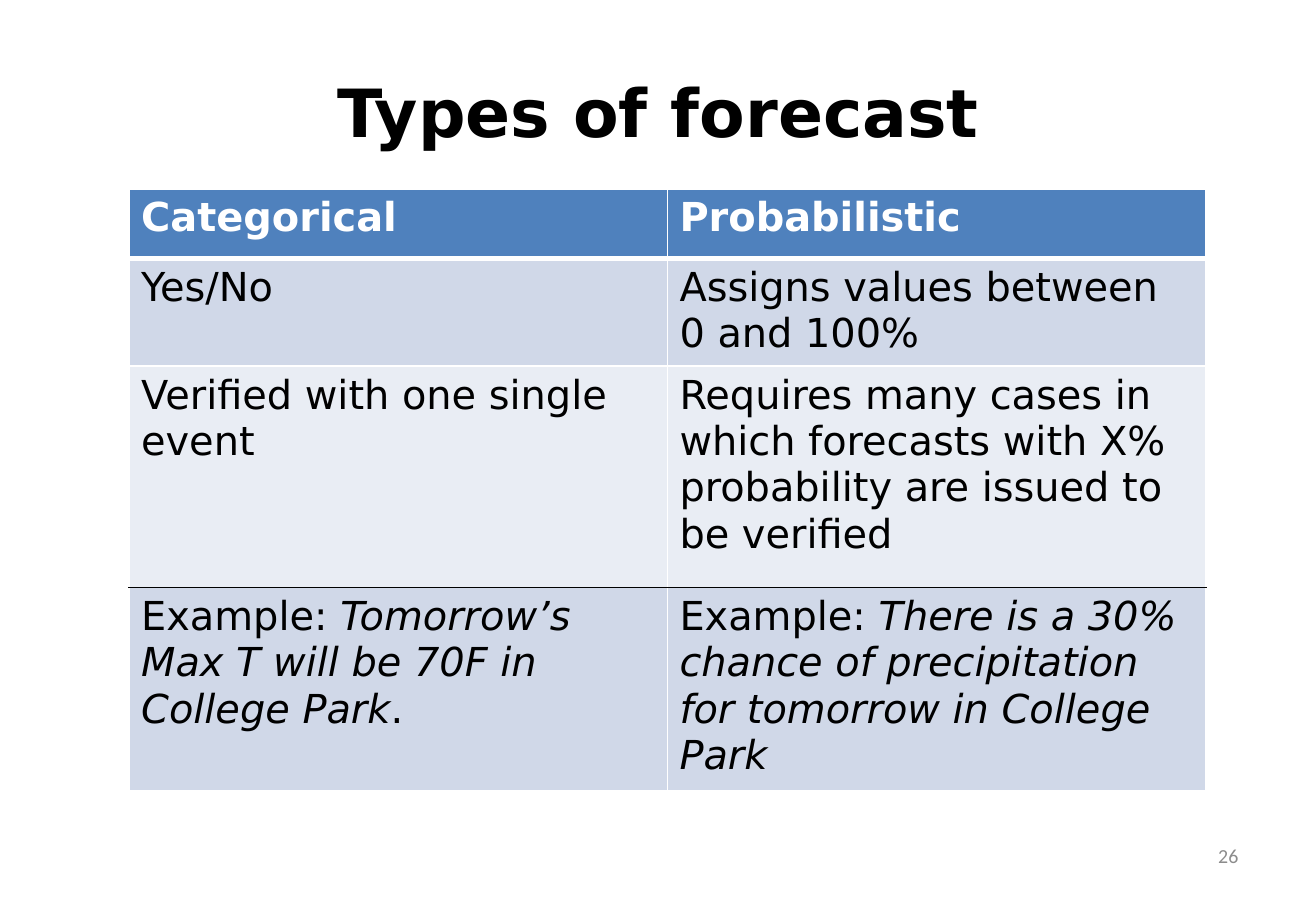
import pptx
import pptx.dml.color
import pptx.enum.text
import pptx.oxml
import pptx.oxml.ns
import pptx.util

RGBColor = pptx.dml.color.RGBColor
ALIGN = pptx.enum.text.PP_ALIGN
MIDDLE = pptx.enum.text.MSO_ANCHOR.MIDDLE

BLACK = RGBColor(0x00, 0x00, 0x00)
WHITE = RGBColor(0xFF, 0xFF, 0xFF)
GREY = RGBColor(0x8C, 0x8C, 0x8C)
HEADER_BLUE = RGBColor(0x4F, 0x81, 0xBD)
BAND_DARK = RGBColor(0xD0, 0xD8, 0xE8)
BAND_LIGHT = RGBColor(0xE9, 0xED, 0xF4)

GRID_COLUMNS, GRID_ROWS = 22, 15

# Each cell is a list of (text, italic) runs.
FORECAST_ROWS = [
    [[("Categorical", False)], [("Probabilistic", False)]],
    [[("Yes/No", False)], [("Assigns values between 0 and 100%", False)]],
    [[("Verified with one single event", False)],
     [("Requires many cases in which forecasts with X% probability "
       "are issued to be verified", False)]],
    [[("Example: ", False),
      ("Tomorrow’s Max T will be 70F in College Park", True),
      (".", False)],
     [("Example: ", False),
      ("There is a 30% chance of precipitation for tomorrow in College Park",
       True)]],
]
ROW_HEIGHTS = [1.16, 1.16, 3.7, 2.84]
ROW_FILLS = [HEADER_BLUE, BAND_DARK, BAND_LIGHT, BAND_DARK]
# Horizontal rules from the top of the table to its bottom: colour, points.
RULES = [(WHITE, 1), (WHITE, 3), (WHITE, 1), (BLACK, 1), (WHITE, 1)]


class SlideBuilder:
    body_font = "DejaVu Sans"
    number_font = "Calibri"
    title_size, table_size, number_size = 40, 24, 12

    def __init__(self, presentation):
        self.cell_width = presentation.slide_width / GRID_COLUMNS
        self.cell_height = presentation.slide_height / GRID_ROWS
        self.slide = presentation.slides.add_slide(
            presentation.slide_layouts.get_by_name("Title Only"))

    def box(self, column, row, columns, rows):
        """Turn grid units into left, top, width and height."""
        return (int(column * self.cell_width), int(row * self.cell_height),
                int(columns * self.cell_width), int(rows * self.cell_height))

    def add_run(self, paragraph, text, size, color, font=body_font,
                bold=False, italic=False):
        run = paragraph.add_run()
        run.text = text
        run.font.name = font
        run.font.size = pptx.util.Pt(size)
        run.font.color.rgb = color
        run.font.bold = bold
        run.font.italic = italic

    def title(self, text, *area):
        heading = self.slide.shapes.title
        heading.left, heading.top, heading.width, heading.height = self.box(*area)
        heading.text_frame.vertical_anchor = MIDDLE
        paragraph = heading.text_frame.paragraphs[0]
        paragraph.alignment = ALIGN.CENTER
        self.add_run(paragraph, text, self.title_size, BLACK, bold=True)

    def page_number(self, text, *area):
        frame = self.slide.shapes.add_textbox(*self.box(*area)).text_frame
        frame.word_wrap = True
        frame.vertical_anchor = MIDDLE
        paragraph = frame.paragraphs[0]
        paragraph.alignment = ALIGN.RIGHT
        self.add_run(paragraph, text, self.number_size, GREY, self.number_font)

    def border(self, cell, side, color, points):
        cell.fill.background()
        fill_index = len(cell._tc.tcPr) - 1
        cell._tc.tcPr.insert(fill_index, pptx.oxml.parse_xml(
            f'<a:ln{side} {pptx.oxml.ns.nsdecls("a")} w="{pptx.util.Pt(points)}">'
            f'<a:solidFill><a:srgbClr val="{color}"/></a:solidFill>'
            f'</a:ln{side}>'))

    def table(self, rows, heights, fills, rules, column, row, columns):
        table = self.slide.shapes.add_table(
            len(rows), len(rows[0]),
            *self.box(column, row, columns, sum(heights))).table
        for index, contents in enumerate(rows):
            table.rows[index].height = int(heights[index] * self.cell_height)
            is_header = index == 0
            for cell, runs in zip(table.rows[index].cells, contents):
                sides = {"L": (WHITE, 1), "R": (WHITE, 1),
                         "T": rules[index], "B": rules[index + 1]}
                for side, (color, points) in sides.items():
                    self.border(cell, side, color, points)
                cell.fill.solid()
                cell.fill.fore_color.rgb = fills[index]
                for text, italic in runs:
                    self.add_run(cell.text_frame.paragraphs[0], text,
                                 self.table_size,
                                 WHITE if is_header else BLACK,
                                 bold=is_header, italic=italic)


def main():
    presentation = pptx.Presentation()
    presentation.slide_width = pptx.util.Inches(11)
    presentation.slide_height = pptx.util.Inches(7.5)
    builder = SlideBuilder(presentation)
    builder.title("Types of forecast", 1.1, 0.6, 19.8, 2.5)
    builder.page_number("26", 15.76, 13.9, 5.14, 0.8)
    builder.table(FORECAST_ROWS, ROW_HEIGHTS, ROW_FILLS, RULES, 2.16, 3.16, 18)
    presentation.save("out.pptx")


if __name__ == "__main__":
    main()
